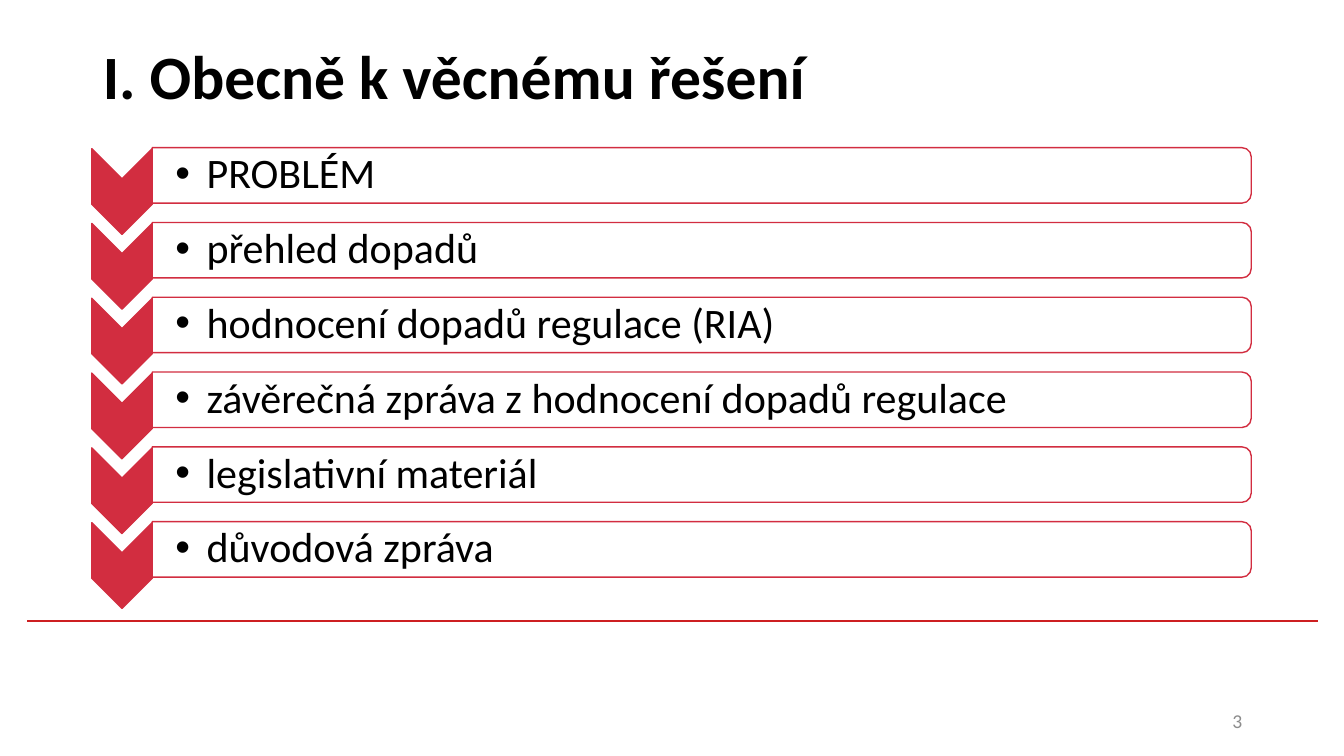
from lxml import etree
from pptx import Presentation
from pptx import util as u
from pptx.dml.color import RGBColor
from pptx.enum import shapes, text
from pptx.oxml.ns import qn

WIDTH, HEIGHT = 13.33, 7.5
COLORS = {"accent": "D22D40", "rule": "CD1F21", "white": "FFFFFF",
          "black": "000000", "grey": "8C8C8C"}
STEPS = ["PROBLÉM", "přehled dopadů", "hodnocení dopadů regulace (RIA)",
         "závěrečná zpráva z hodnocení dopadů regulace",
         "legislativní materiál", "důvodová zpráva"]

FIRST_ROW, ROW_PITCH = 1.74, 3.71 / 5
BAR_LEFT, BAR_LENGTH, BAR_HEIGHT = 1.51, 10.9, 0.55
CHEVRON_LENGTH, CHEVRON_WIDTH, CHEVRON_DROP = 0.85, 0.6, 0.16
BULLET_INDENT = 0.31


def rgb(name):
    return RGBColor.from_string(COLORS[name])


def apply(target, **values):
    for key, value in values.items():
        setattr(target, key, value)


def place(shape, left, top, width, height):
    apply(shape, left=u.Inches(left), top=u.Inches(top),
          width=u.Inches(width), height=u.Inches(height))


def write(frame, content, size, color, align=text.PP_ALIGN.LEFT, bold=False):
    apply(frame, word_wrap=True, vertical_anchor=text.MSO_ANCHOR.MIDDLE,
          auto_size=text.MSO_AUTO_SIZE.NONE)
    paragraph = frame.paragraphs[0]
    run = paragraph.add_run()
    run.text = content
    paragraph.alignment = align
    apply(run.font, name="Calibri", size=u.Pt(size), bold=bold)
    run.font.color.rgb = rgb(color)
    return paragraph


def add_turned_shape(slide, kind, center_x, center_y, length, breadth, fill):
    """Add an accent-outlined shape turned a quarter clockwise about its centre."""
    shape = slide.shapes.add_shape(
        kind, u.Inches(center_x - length / 2), u.Inches(center_y - breadth / 2),
        u.Inches(length), u.Inches(breadth))
    shape.rotation = 90
    shape.shadow.inherit = False
    shape.fill.solid()
    shape.fill.fore_color.rgb = rgb(fill)
    shape.line.color.rgb = rgb("accent")
    shape.line.width = u.Pt(1)


def add_bullet(paragraph):
    properties = paragraph._p.get_or_add_pPr()
    properties.set("marL", str(u.Inches(BULLET_INDENT)))
    properties.set("indent", str(-u.Inches(BULLET_INDENT)))
    etree.SubElement(properties, qn("a:buFont")).set("typeface", "Arial")
    etree.SubElement(properties, qn("a:buChar")).set("char", "•")
    paragraph.line_spacing = 0.9


def add_step(slide, row, label):
    center_y = FIRST_ROW + row * ROW_PITCH
    add_turned_shape(slide, shapes.MSO_SHAPE.CHEVRON,
                     BAR_LEFT - CHEVRON_WIDTH / 2, center_y + CHEVRON_DROP,
                     CHEVRON_LENGTH, CHEVRON_WIDTH, "accent")
    add_turned_shape(slide, shapes.MSO_SHAPE.ROUND_2_SAME_RECTANGLE,
                     BAR_LEFT + BAR_LENGTH / 2, center_y,
                     BAR_HEIGHT, BAR_LENGTH, "white")
    caption = slide.shapes.add_textbox(0, 0, 0, 0)
    place(caption, BAR_LEFT, center_y - 0.25, BAR_LENGTH, 0.5)
    inset = u.Inches(0.02)
    apply(caption.text_frame, margin_left=u.Inches(0.23), margin_right=inset,
          margin_top=inset, margin_bottom=inset)
    add_bullet(write(caption.text_frame, label, 30, "black"))


def add_rule(slide, left, y, length):
    rule = slide.shapes.add_connector(
        shapes.MSO_CONNECTOR.STRAIGHT, u.Inches(left), u.Inches(y),
        u.Inches(left + length), u.Inches(y))
    rule.line.color.rgb = rgb("rule")
    rule.line.width = u.Pt(1.75)
    etree.SubElement(rule._element.spPr, qn("a:effectLst"))


def add_page_number(slide, number):
    box = slide.shapes.add_textbox(0, 0, 0, 0)
    place(box, 9.42, 6.95, 3, 0.4)
    write(box.text_frame, number, 14, "grey", text.PP_ALIGN.RIGHT)


def main():
    deck = Presentation()
    apply(deck, slide_width=u.Inches(WIDTH), slide_height=u.Inches(HEIGHT))
    slide = deck.slides.add_slide(deck.slide_layouts[5])
    add_rule(slide, 0.27, 6.16, 12.8)
    place(slide.shapes.title, 0.92, 0.02, 11.5, 1.45)
    write(slide.shapes.title.text_frame, "I. Obecně k věcnému řešení",
          44, "black", bold=True)
    add_page_number(slide, "3")
    for row, label in enumerate(STEPS):
        add_step(slide, row, label)
    deck.save("out.pptx")


if __name__ == "__main__":
    main()
